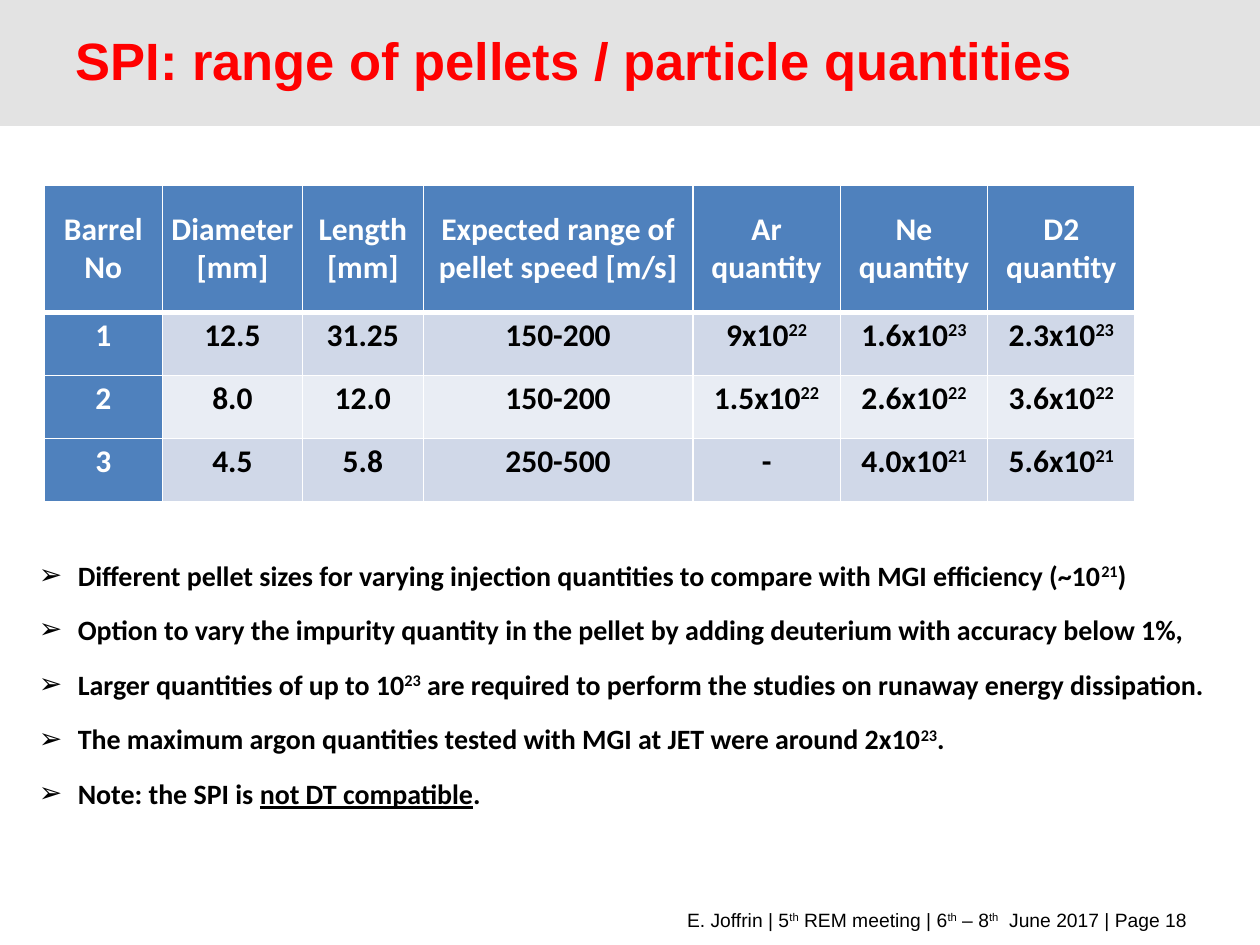
from dataclasses import dataclass
from typing import NamedTuple

from lxml import etree
from pptx import Presentation, util as u
from pptx.dml.color import RGBColor as Rgb
from pptx.enum import shapes, text
from pptx.oxml import ns


@dataclass(frozen=True)
class Theme:
    band: str = "E3E3E3"
    title: str = "FF0000"
    head: str = "4F81BD"
    odd: str = "D0D8E8"
    even: str = "E9EDF4"
    light: str = "FFFFFF"
    dark: str = "000000"
    sans: str = "Arial"
    body: str = "Calibri"
    big: int = 30
    cell: int = 18
    item: int = 16
    foot: int = 11


class Box(NamedTuple):
    left: float
    top: float
    width: float
    height: float

    def emu(self) -> list:
        return [u.Inches(v) for v in self]


class Style(NamedTuple):
    face: str
    size: int
    color: str
    bold: bool = True


T = Theme()
COLS = [0.94, 1.11, 0.96, 2.14, 1.17, 1.17, 1.17]
ROWS = [1.01, 0.5, 0.5, 0.5]
# In all wording, ^ encloses superscripts and _ encloses underlined words.
CELLS = [
    ["Barrel\nNo", "Diameter [mm]", "Length [mm]",
     "Expected range of pellet speed [m/s]",
     "Ar quantity", "Ne quantity", "D2 quantity"],
    ["1", "12.5", "31.25", "150-200", "9x10^22^", "1.6x10^23^", "2.3x10^23^"],
    ["2", "8.0", "12.0", "150-200", "1.5x10^22^", "2.6x10^22^", "3.6x10^22^"],
    ["3", "4.5", "5.8", "250-500", "-", "4.0x10^21^", "5.6x10^21^"],
]
ITEMS = [
    "Different pellet sizes for varying injection quantities to compare "
    "with MGI efficiency (~10^21^)",
    "Option to vary the impurity quantity in the pellet by adding deuterium "
    "with accuracy below 1%,",
    "Larger quantities of up to 10^23^ are required to perform the studies "
    "on runaway energy dissipation.",
    "The maximum argon quantities tested with MGI at JET were around 2x10^23^.",
    "Note: the SPI is _not DT compatible_.",
]
FOOT = "E. Joffrin | 5^th^ REM meeting | 6^th^ – 8^th^  June 2017 | Page 18"


def write(para, words: str, style: Style) -> None:
    """Fill a paragraph, turning ^ and _ marks into run formats."""
    font = para.font
    font.name, font.size, font.bold = style.face, u.Pt(style.size), style.bold
    font.color.rgb = Rgb.from_string(style.color)
    for i, part in enumerate(words.split("^")):
        for j, piece in enumerate(part.split("_")):
            if not piece:
                continue
            run = para.add_run()
            run.text = piece
            if i % 2:
                run.font._element.set("baseline", "30000")
            if j % 2:
                run.font.underline = True


def mark(para, sign: str, dent: float) -> None:
    """Give a paragraph a hanging bullet."""
    prop = para._p.get_or_add_pPr()
    prop.set("marL", str(u.Inches(dent)))
    prop.set("indent", str(-u.Inches(dent)))
    etree.SubElement(prop, ns.qn("a:buFont"), typeface=T.sans)
    etree.SubElement(prop, ns.qn("a:buChar"), char=sign)


def edge(cell, low: int) -> None:
    """Draw white cell borders; low is the bottom width in points."""
    prop = cell._tc.get_or_add_tcPr()
    for i, (side, wide) in enumerate(zip("LRTB", (1, 1, 1, low))):
        line = etree.Element(ns.qn(f"a:ln{side}"), w=str(u.Pt(wide)))
        fill = etree.SubElement(line, ns.qn("a:solidFill"))
        etree.SubElement(fill, ns.qn("a:srgbClr"), val=T.light)
        prop.insert(i, line)


def add_head(slide, words: str) -> None:
    title = slide.shapes.title
    band = slide.shapes.add_shape(
        shapes.MSO_SHAPE.RECTANGLE, *Box(0, 0, 10, 1).emu())
    band.shadow.inherit = False
    band.fill.solid()
    band.fill.fore_color.rgb = Rgb.from_string(T.band)
    band.line.fill.background()
    title._element.addprevious(band._element)
    title.left, title.top, title.width, title.height = Box(
        0.5, 0.25, 8.25, 0.5).emu()
    frame = title.text_frame
    frame.auto_size = text.MSO_AUTO_SIZE.NONE
    frame.vertical_anchor = text.MSO_ANCHOR.MIDDLE
    para = frame.paragraphs[0]
    para.alignment = text.PP_ALIGN.LEFT
    para.line_spacing = u.Pt(32)
    write(para, words, Style(T.sans, T.big, T.title))


def add_grid(slide, box: Box) -> None:
    grid = slide.shapes.add_table(len(ROWS), len(COLS), *box.emu()).table
    grid.first_col = True
    for col, wide in zip(grid.columns, COLS):
        col.width = u.Inches(wide)
    for r, (row, high) in enumerate(zip(grid.rows, ROWS)):
        row.height = u.Inches(high)
        for c, cell in enumerate(row.cells):
            head = r == 0 or c == 0
            shade = T.head if head else T.odd if r % 2 else T.even
            cell.fill.solid()
            cell.fill.fore_color.rgb = Rgb.from_string(shade)
            edge(cell, 1 if r else 3)
            cell.vertical_anchor = text.MSO_ANCHOR.MIDDLE
            cell.margin_left = cell.margin_right = u.Inches(0.04)
            cell.margin_top = cell.margin_bottom = 0
            style = Style(T.body, T.cell, T.light if head else T.dark)
            frame = cell.text_frame
            for i, words in enumerate(CELLS[r][c].split("\n")):
                para = frame.add_paragraph() if i else frame.paragraphs[0]
                para.alignment = text.PP_ALIGN.CENTER
                if r:
                    para.line_spacing = u.Pt(12)
                write(para, words, style)


def add_text(slide, box: Box):
    frame = slide.shapes.add_textbox(*box.emu()).text_frame
    frame.word_wrap = True
    return frame


def add_list(slide, box: Box) -> None:
    frame = add_text(slide, box)
    for i, words in enumerate(ITEMS):
        para = frame.add_paragraph() if i else frame.paragraphs[0]
        mark(para, "➢", 0.31)
        para.space_before = u.Pt(12 if i else 0)
        write(para, words, Style(T.body, T.item, T.dark))


def add_foot(slide, box: Box) -> None:
    para = add_text(slide, box).paragraphs[0]
    para.alignment = text.PP_ALIGN.RIGHT
    write(para, FOOT, Style(T.sans, T.foot, T.dark, False))


def main() -> None:
    deck = Presentation()
    deck.slide_width, deck.slide_height = u.Inches(10), u.Inches(7.5)
    slide = deck.slides.add_slide(deck.slide_layouts[5])
    add_head(slide, "SPI: range of pellets / particle quantities")
    add_grid(slide, Box(0.35, 1.47, sum(COLS), sum(ROWS)))
    add_list(slide, Box(0.21, 4.38, 10, 2.12))
    add_foot(slide, Box(0.51, 7.16, 9.01, 0.29))
    deck.save("out.pptx")


if __name__ == "__main__":
    main()
